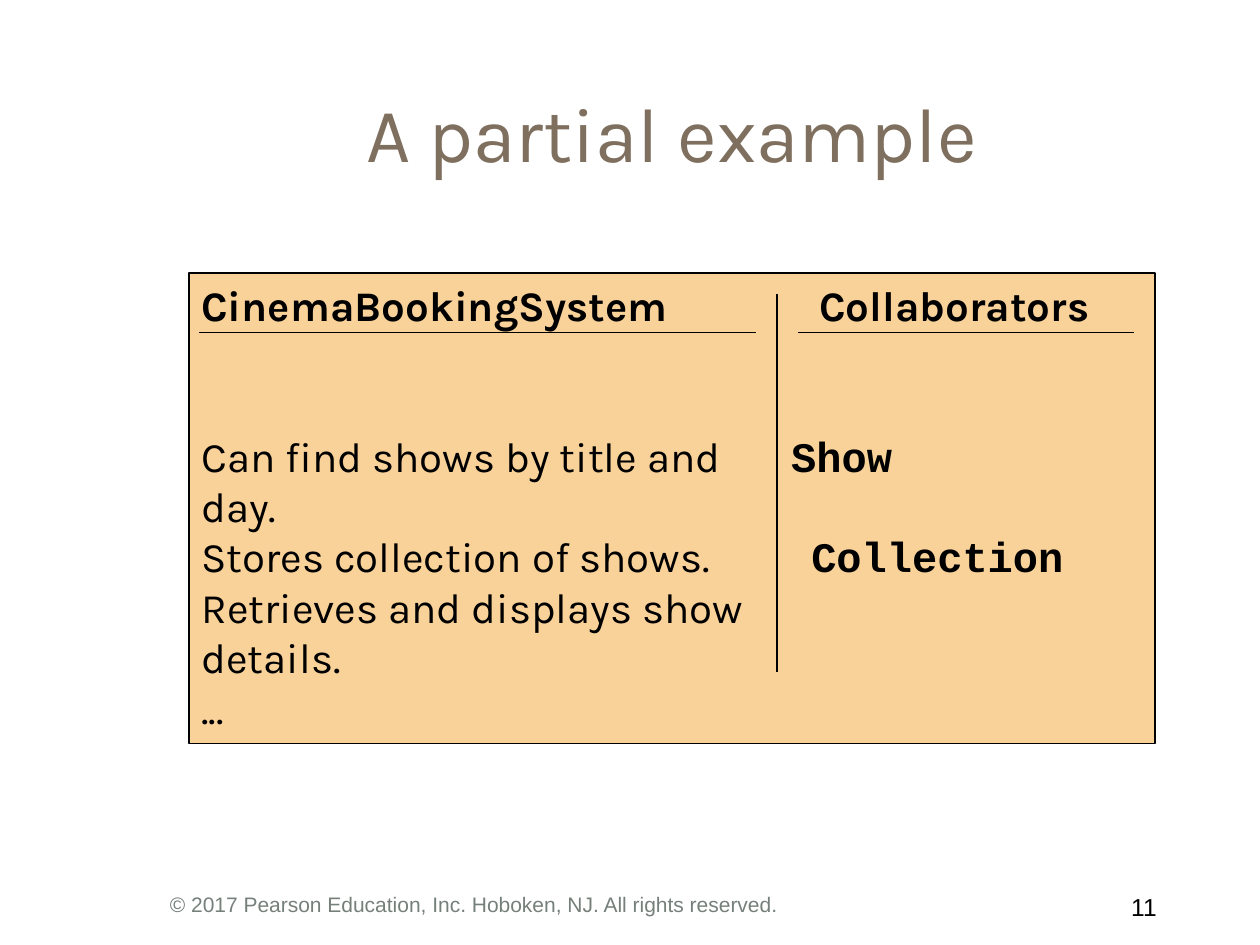
from lxml.etree import SubElement
from pptx import Presentation
from pptx.dml.color import RGBColor
from pptx.enum.shapes import MSO_CONNECTOR as Connector, MSO_SHAPE as Shape
from pptx.enum.text import MSO_ANCHOR as Anchor, PP_ALIGN as Align
from pptx.oxml.ns import qn
from pptx.util import Pt

BLACK = RGBColor(0x00, 0x00, 0x00)
BROWN = RGBColor(0x7F, 0x6F, 0x5E)
GREY = RGBColor(0x76, 0x80, 0x7A)
SAND = RGBColor(0xF9, 0xD2, 0x9A)
CODE_FONT = "Courier New"


def add_text(para, text, font="Karla", size=24, color=BLACK, bold=False):
    span = para.add_run()
    span.text = text
    span.font.name = font
    span.font.size = Pt(size)
    span.font.bold = bold
    span.font.color.rgb = color


def add_tab(para, position):
    tabs = SubElement(para._p.get_or_add_pPr(), qn("a:tabLst"))
    SubElement(tabs, qn("a:tab"), pos=str(Pt(position)), algn="l")


class SlideBuilder:
    line_width = 0.75

    def __init__(self, deck):
        self.page = deck.slides.add_slide(deck.slide_layouts[5])

    def title(self, text, left, top, width, height):
        box = self.page.shapes.title
        box.left, box.top, box.width, box.height = map(Pt, (left, top, width, height))
        box.text_frame.vertical_anchor = Anchor.MIDDLE
        para = box.text_frame.paragraphs[0]
        para.alignment = Align.CENTER
        add_text(para, text, size=44, color=BROWN)

    def label(self, text, left, top, width, height, align=Align.LEFT, **style):
        box = self.page.shapes.add_textbox(*map(Pt, (left, top, width, height)))
        box.text_frame.word_wrap = True
        para = box.text_frame.paragraphs[0]
        para.alignment = align
        add_text(para, text, font="Arial", **style)

    def card(self, rows, left, top, width, height, header_gap):
        box = self.page.shapes.add_shape(
            Shape.RECTANGLE, *map(Pt, (left, top, width, height)))
        box.shadow.inherit = False
        box.fill.solid()
        box.fill.fore_color.rgb = SAND
        box.line.color.rgb = BLACK
        box.line.width = Pt(self.line_width)
        frame = box.text_frame
        frame.word_wrap = True
        frame.vertical_anchor = Anchor.TOP
        for index, (duty, helper, tab, font) in enumerate(rows):
            para = frame.add_paragraph() if index else frame.paragraphs[0]
            para.alignment = Align.LEFT
            if index == 0:
                para.space_after = Pt(header_gap)
            add_text(para, duty, bold=index == 0)
            if helper:
                add_tab(para, tab)
                add_text(para, "\t" + helper, font=font, bold=True)

    def rule(self, x1, y1, x2, y2):
        line = self.page.shapes.add_connector(
            Connector.STRAIGHT, *map(Pt, (x1, y1, x2, y2)))
        line.line.color.rgb = BLACK
        line.line.width = Pt(self.line_width)
        SubElement(line._element.spPr, qn("a:effectLst"))


def main():
    deck = Presentation()
    deck.slide_width, deck.slide_height = Pt(720), Pt(540)
    slide = SlideBuilder(deck)

    # Title and footer
    slide.title("A partial example", 78, 30, 612, 90)
    slide.label("11", 630, 506, 38, 24, align=Align.RIGHT, size=14)
    slide.label("© 2017 Pearson Education, Inc. Hoboken, NJ. All rights reserved.",
                90, 506, 546, 24, size=12, color=GREY)

    # Class card: responsibility, collaborator, tab position, collaborator font
    rows = [
        ("CinemaBookingSystem", "Collaborators", 353, "Karla"),
        ("Can find shows by title and", "Show", 337, CODE_FONT),
        ("day.", None, None, None),
        ("Stores collection of shows.", "Collection", 348.5, CODE_FONT),
        ("Retrieves and displays show", None, None, None),
        ("details.", None, None, None),
        ("...", None, None, None),
    ]
    slide.card(rows, 108, 156, 552, 269, header_gap=57.5)

    # Header underlines and column divider
    for start, end in ((114, 432), (456, 648)):
        slide.rule(start, 190, end, 190)
    slide.rule(444, 168, 444, 384)

    deck.save("out.pptx")


if __name__ == "__main__":
    main()
